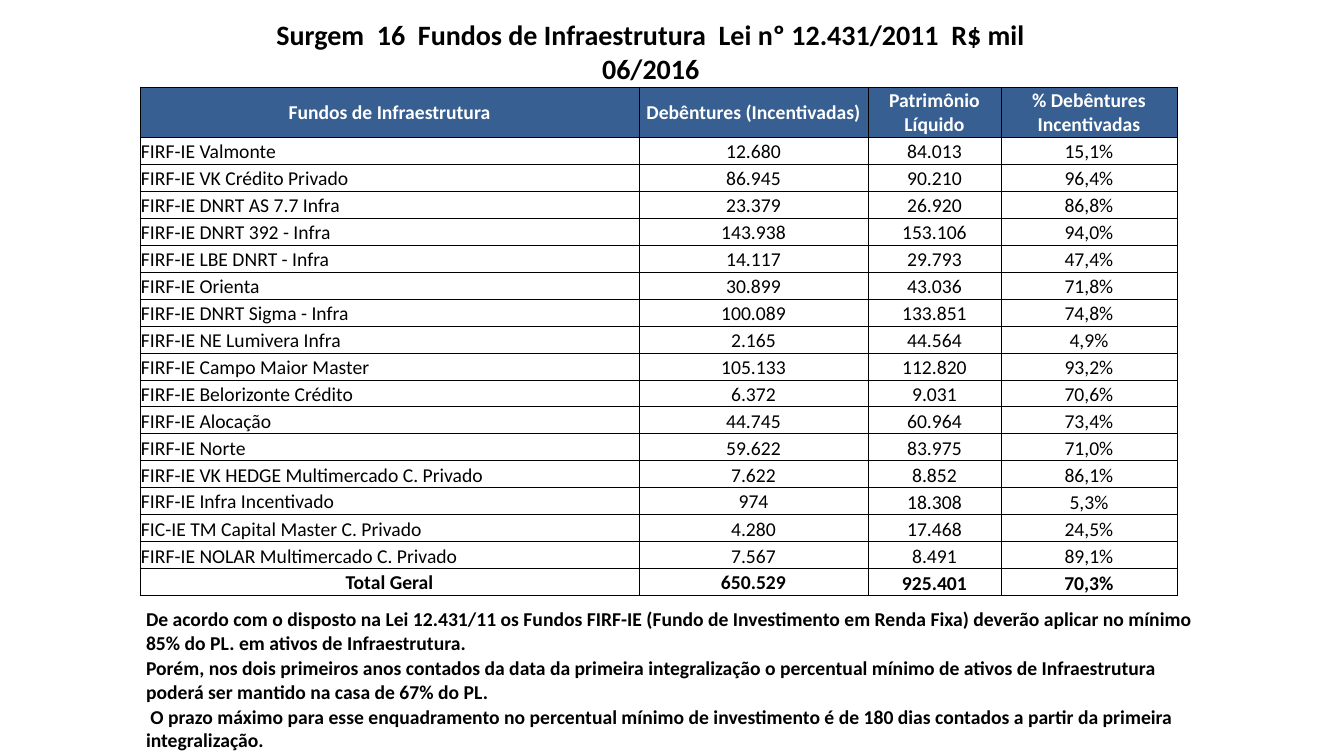
from lxml import etree
from pptx import Presentation
from pptx.dml.color import RGBColor
from pptx.enum.text import MSO_ANCHOR, MSO_AUTO_SIZE, PP_ALIGN
from pptx.oxml.ns import qn
from pptx.util import Pt

PX = 914400 / 100.8
LEFT, MID = PP_ALIGN.LEFT, PP_ALIGN.CENTER
CENTRE, BOTTOM = MSO_ANCHOR.MIDDLE, MSO_ANCHOR.BOTTOM
GROW = MSO_AUTO_SIZE.SHAPE_TO_FIT_TEXT
PLAIN = "{2D5ABB26-0587-4C30-8999-92F81FD0307C}"
BLACK, WHITE, BLUE = "000000", "FFFFFF", "375F91"

TITLE = ["Surgem  16  Fundos de Infraestrutura  Lei nº 12.431/2011  R$ mil ",
         "06/2016 "]
HEADS = ["Fundos de Infraestrutura", "Debêntures (Incentivadas)",
         "Patrimônio Líquido", "% Debêntures Incentivadas"]
FUNDS = [
    ("FIRF-IE Valmonte", "12.680", "84.013", "15,1%"),
    ("FIRF-IE VK Crédito Privado", "86.945", "90.210", "96,4%"),
    ("FIRF-IE DNRT AS 7.7 Infra", "23.379", "26.920", "86,8%"),
    ("FIRF-IE DNRT 392 - Infra", "143.938", "153.106", "94,0%"),
    ("FIRF-IE LBE DNRT - Infra", "14.117", "29.793", "47,4%"),
    ("FIRF-IE Orienta", "30.899", "43.036", "71,8%"),
    ("FIRF-IE DNRT Sigma - Infra", "100.089", "133.851", "74,8%"),
    ("FIRF-IE NE Lumivera Infra", "2.165", "44.564", "4,9%"),
    ("FIRF-IE Campo Maior Master", "105.133", "112.820", "93,2%"),
    ("FIRF-IE Belorizonte Crédito", "6.372", "9.031", "70,6%"),
    ("FIRF-IE Alocação", "44.745", "60.964", "73,4%"),
    ("FIRF-IE Norte", "59.622", "83.975", "71,0%"),
    ("FIRF-IE VK HEDGE Multimercado C. Privado", "7.622", "8.852", "86,1%"),
    ("FIRF-IE Infra Incentivado", "974", "18.308", "5,3%"),
    ("FIC-IE TM Capital Master C. Privado", "4.280", "17.468", "24,5%"),
    ("FIRF-IE NOLAR Multimercado C. Privado", "7.567", "8.491", "89,1%"),
]
TOTAL = ("Total Geral", "650.529", "925.401", "70,3%")
RAISED = ("FIRF-IE Infra Incentivado", "Total Geral")
NOTES = [
    "De acordo com o disposto na Lei 12.431/11 os Fundos FIRF-IE (Fundo de "
    "Investimento em Renda Fixa) deverão aplicar no mínimo 85% do PL. em "
    "ativos de Infraestrutura.",
    "Porém, nos dois primeiros anos contados da data da primeira "
    "integralização o percentual mínimo de ativos de Infraestrutura poderá "
    "ser mantido na casa de 67% do PL.",
    " O prazo máximo para esse enquadramento no percentual mínimo de "
    "investimento é de 180 dias contados a partir da primeira integralização.",
]


def px(n):
    return round(n * PX)


def rgb(code):
    return RGBColor.from_string(code)


def assign(item, values):
    for name, value in values.items():
        setattr(item, name, value)


def write(para, text, size, color=BLACK, bold=True, align=LEFT):
    para.alignment = align
    run = para.add_run()
    run.text = text
    assign(run.font, {"name": "Calibri", "size": Pt(size), "bold": bold})
    run.font.color.rgb = rgb(color)


def frame(cell):
    """Draw a thin black border on all four sides of a cell."""
    props = cell._tc.get_or_add_tcPr()
    for side in ("lnL", "lnR", "lnT", "lnB"):
        line = etree.SubElement(props, qn("a:" + side), w=str(Pt(0.5)))
        solid = etree.SubElement(line, qn("a:solidFill"))
        etree.SubElement(solid, qn("a:srgbClr"), val=BLACK)


def fill_cell(cell, text, anchor=BOTTOM, fill=None, border=False, **style):
    assign(cell, {"margin_left": px(1), "margin_right": px(1),
                  "margin_top": px(1), "margin_bottom": 0,
                  "vertical_anchor": anchor})
    if border:
        frame(cell)
    if fill:
        cell.fill.solid()
        cell.fill.fore_color.rgb = rgb(fill)
    else:
        cell.fill.background()
    write(cell.text_frame.paragraphs[0], text, 14, **style)


def add_grid(slide, left, top, widths, heights):
    """Add an unstyled table with the given column widths and row heights."""
    table = slide.shapes.add_table(
        len(heights), len(widths), px(left), px(top),
        px(sum(widths)), px(sum(heights))).table
    assign(table, {"first_row": False, "horz_banding": False})
    table._tbl.tblPr.find(qn("a:tableStyleId")).text = PLAIN
    for col, width in zip(table.columns, widths):
        col.width = px(width)
    for row, height in zip(table.rows, heights):
        row.height = px(height)
    return table


def add_title(slide, left, top, width, height):
    box = slide.shapes.add_textbox(px(left), px(top), px(width), px(height))
    text = box.text_frame
    assign(text, {"word_wrap": True, "auto_size": GROW})
    for i, line in enumerate(TITLE):
        para = text.add_paragraph() if i else text.paragraphs[0]
        write(para, line, 20, align=MID)


def add_funds(slide, left, top, widths, head, step):
    rows = [HEADS, *FUNDS, TOTAL]
    table = add_grid(slide, left, top, widths, [head] + [step] * (len(rows) - 1))
    for r, row in enumerate(rows):
        first, total = row is HEADS, row is TOTAL
        for c, text in enumerate(row):
            raised = first or (row[0] in RAISED and c < 2)
            fill_cell(table.cell(r, c), text,
                      anchor=CENTRE if raised else BOTTOM,
                      fill=BLUE if first else None, border=True,
                      color=WHITE if first else BLACK,
                      bold=first or total,
                      align=MID if c or first or total else LEFT)


def add_notes(slide, left, top, width, step):
    table = add_grid(slide, left, top, [width], [step] * len(NOTES))
    for r, note in enumerate(NOTES):
        fill_cell(table.cell(r, 0), note)


def main():
    deck = Presentation()
    assign(deck, {"slide_width": px(1344), "slide_height": px(756)})
    slide = deck.slides.add_slide(deck.slide_layouts[6])
    add_notes(slide, 145, 607, 1072, 48)
    add_funds(slide, 140, 87, [499, 229, 133, 176], 50, 27)
    add_title(slide, 139, 13, 1030, 78)
    deck.save("out.pptx")


if __name__ == "__main__":
    main()
